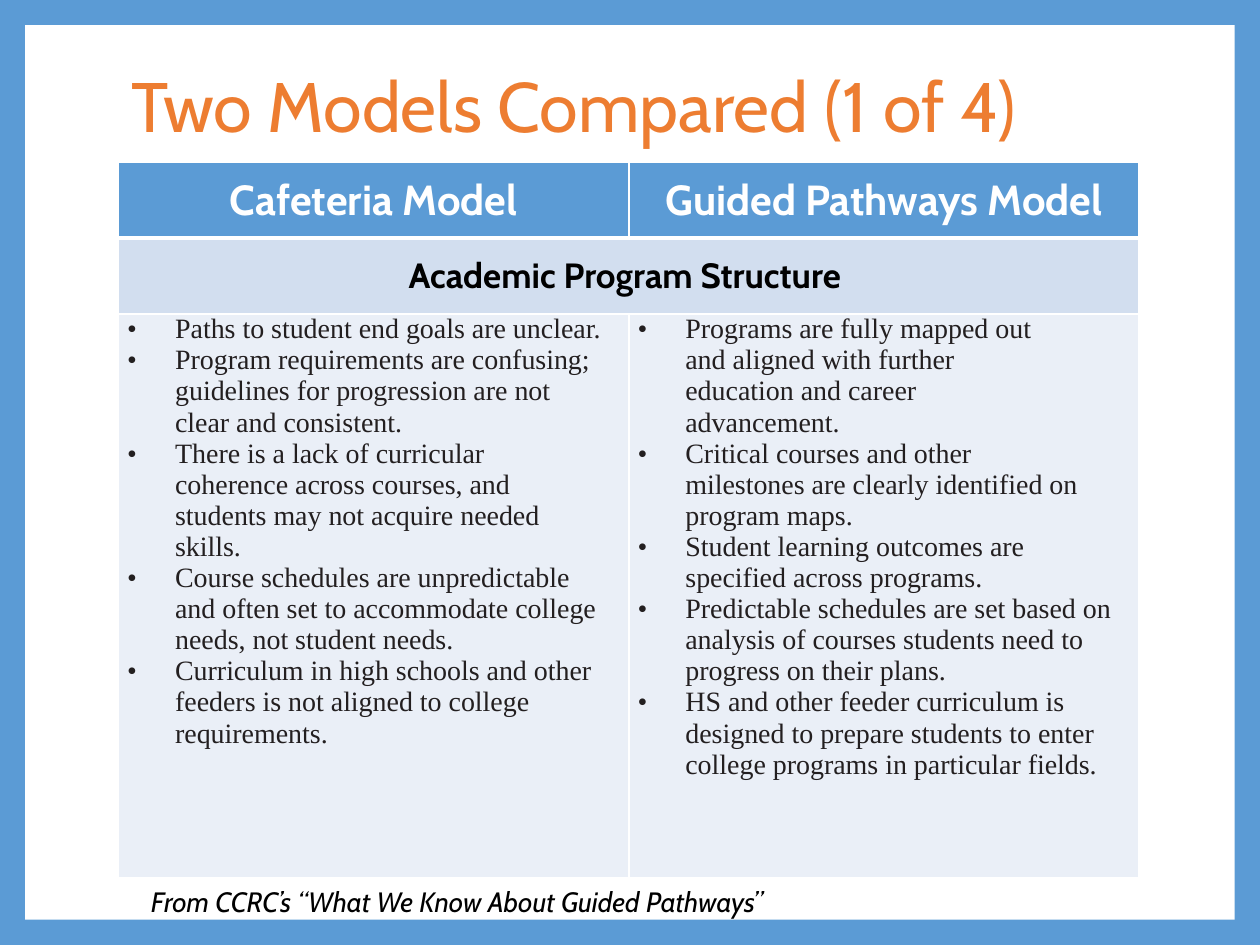
from dataclasses import dataclass

from lxml.etree import SubElement
from pptx import Presentation
from pptx.dml.color import RGBColor
from pptx.enum.shapes import MSO_SHAPE
from pptx.enum.text import MSO_ANCHOR, MSO_AUTO_SIZE, PP_ALIGN
from pptx.oxml.ns import qn
from pptx.util import Inches, Pt


@dataclass(frozen=True)
class Theme:
    """Colours, fonts and type sizes of the slide."""
    blue: str = "5B9BD5"
    band: str = "D2DEEF"
    pale: str = "EAEFF7"
    white: str = "FFFFFF"
    black: str = "000000"
    ink: str = "231F20"
    orange: str = "ED7D31"
    sans: str = "Cabin"
    serif: str = "Times New Roman"
    title: int = 40
    head: int = 24
    sub: int = 20
    body: int = 16


THEME = Theme()
HEADS = ["Cafeteria Model", "Guided Pathways Model"]
GROUP = "Academic Program Structure "
LISTS = [
    [
        ("Paths to student end goals are unclear.", 0),
        ("Program requirements are confusing; guidelines for progression are not clear and consistent.", 0.19),
        ("There is a lack of curricular coherence across courses, and students may not acquire needed skills.", 0.39),
        ("Course schedules are unpredictable and often set to accommodate college needs, not student needs.", 0.1),
        ("Curriculum in high schools and other feeders is not aligned to college requirements.", 0),
    ],
    [
        ("Programs are fully mapped out and aligned with further education and career advancement.", 0.6),
        ("Critical courses and other milestones are clearly identified on program maps.", 0.36),
        ("Student learning outcomes are specified across programs.", 0.2),
        ("Predictable schedules are set based on analysis of courses students need to progress on their plans.", 0),
        ("HS and other feeder curriculum is designed to prepare students to enter college programs in particular fields.", 0),
    ],
]


def paint(fill, color):
    """Give a fill one solid colour."""
    fill.solid()
    fill.fore_color.rgb = RGBColor.from_string(color)


def write(para, text, face, size, color, bold=False, slant=False):
    """Add one formatted run to a paragraph."""
    run = para.add_run()
    run.text = text
    font = run.font
    font.name, font.size = face, Pt(size)
    font.bold, font.italic = bold, slant
    font.color.rgb = RGBColor.from_string(color)


def edge(cell, low=1):
    """Draw white borders round a cell, the lower one as wide as asked."""
    props = cell._tc.get_or_add_tcPr()
    for spot, (side, wide) in enumerate(zip("LRTB", (1, 1, 1, low))):
        line = props.makeelement(qn(f"a:ln{side}"), {"w": str(Pt(wide))})
        fill = SubElement(line, qn("a:solidFill"))
        SubElement(fill, qn("a:srgbClr"), val=THEME.white)
        props.insert(spot, line)


def bullet(para, right):
    """Set a hanging bullet and a right indent on a paragraph."""
    props = para._p.get_or_add_pPr()
    props.set("marL", str(Inches(0.38)))
    props.set("indent", str(Inches(-0.38)))
    props.set("marR", str(Inches(right)))
    tint = SubElement(props, qn("a:buClr"))
    SubElement(tint, qn("a:srgbClr"), val=THEME.ink)
    SubElement(props, qn("a:buFont"), typeface=THEME.serif)
    SubElement(props, qn("a:buChar"), char="•")


def label(cell, text, size, color, back, low=1):
    """Fill a heading cell with centred bold text."""
    paint(cell.fill, back)
    edge(cell, low)
    cell.vertical_anchor = MSO_ANCHOR.MIDDLE
    para = cell.text_frame.paragraphs[0]
    para.alignment = PP_ALIGN.CENTER
    write(para, text, THEME.sans, size, color, bold=True)


def points(cell, items):
    """Fill a body cell with a bulleted list."""
    paint(cell.fill, THEME.pale)
    edge(cell)
    cell.margin_left = cell.margin_right = Inches(0.07)
    cell.margin_top = cell.margin_bottom = 0
    frame = cell.text_frame
    for spot, (text, right) in enumerate(items):
        para = frame.add_paragraph() if spot else frame.paragraphs[0]
        bullet(para, right)
        write(para, text, THEME.serif, THEME.body, THEME.ink)


def panel(slide, box):
    """Place the white panel inside the blue frame."""
    paint(slide.background.fill, THEME.blue)
    shape = slide.shapes.add_shape(MSO_SHAPE.RECTANGLE, *box)
    shape.shadow.inherit = False
    paint(shape.fill, THEME.white)
    shape.line.fill.background()
    tree = slide.shapes._spTree
    tree.remove(shape._element)
    tree.insert(2, shape._element)


def title(slide, box, text):
    """Move the title placeholder into the box and fill it."""
    shape = slide.shapes.title
    shape.left, shape.top, shape.width, shape.height = box
    frame = shape.text_frame
    frame.auto_size = MSO_AUTO_SIZE.NONE
    frame.vertical_anchor = MSO_ANCHOR.MIDDLE
    para = frame.paragraphs[0]
    para.alignment = PP_ALIGN.LEFT
    para.line_spacing = 0.9
    write(para, text, THEME.sans, THEME.title, THEME.orange)


def grid(slide, box):
    """Place the table that compares the two models."""
    table = slide.shapes.add_table(3, len(HEADS), *box).table
    top = Inches(0.6)
    for row, high in zip(table.rows, (top, top, box[3] - 2 * top)):
        row.height = high
    for col, (head, items) in enumerate(zip(HEADS, LISTS)):
        table.columns[col].width = box[2] // len(HEADS)
        label(table.cell(0, col), head, THEME.head, THEME.white, THEME.blue, 3)
        points(table.cell(2, col), items)
    group = table.cell(1, 0)
    group.merge(table.cell(1, 1))
    label(group, GROUP, THEME.sub, THEME.black, THEME.band)


def credit(slide, box, text):
    """Place the source line under the table."""
    frame = slide.shapes.add_textbox(*box).text_frame
    frame.word_wrap = True
    write(frame.paragraphs[0], text, THEME.sans, THEME.body, THEME.black, slant=True)


def area(*sides):
    """Turn left, top, width and height in inches into a box."""
    return [Inches(side) for side in sides]


def main():
    """Build the slide and save it."""
    deck = Presentation()
    deck.slide_width, deck.slide_height = Inches(10), Inches(7.5)
    slide = deck.slides.add_slide(deck.slide_layouts[5])
    panel(slide, area(0.2, 0.2, 9.6, 7.1))
    title(slide, area(0.94, 0.13, 8.1, 1.48), "Two Models Compared (1 of 4)")
    grid(slide, area(0.94, 1.29, 8.1, 5.68))
    credit(slide, area(1.1, 6.97, 7.54, 0.37), "From CCRC’s “What We Know About Guided Pathways”")
    deck.save("out.pptx")


if __name__ == "__main__":
    main()
